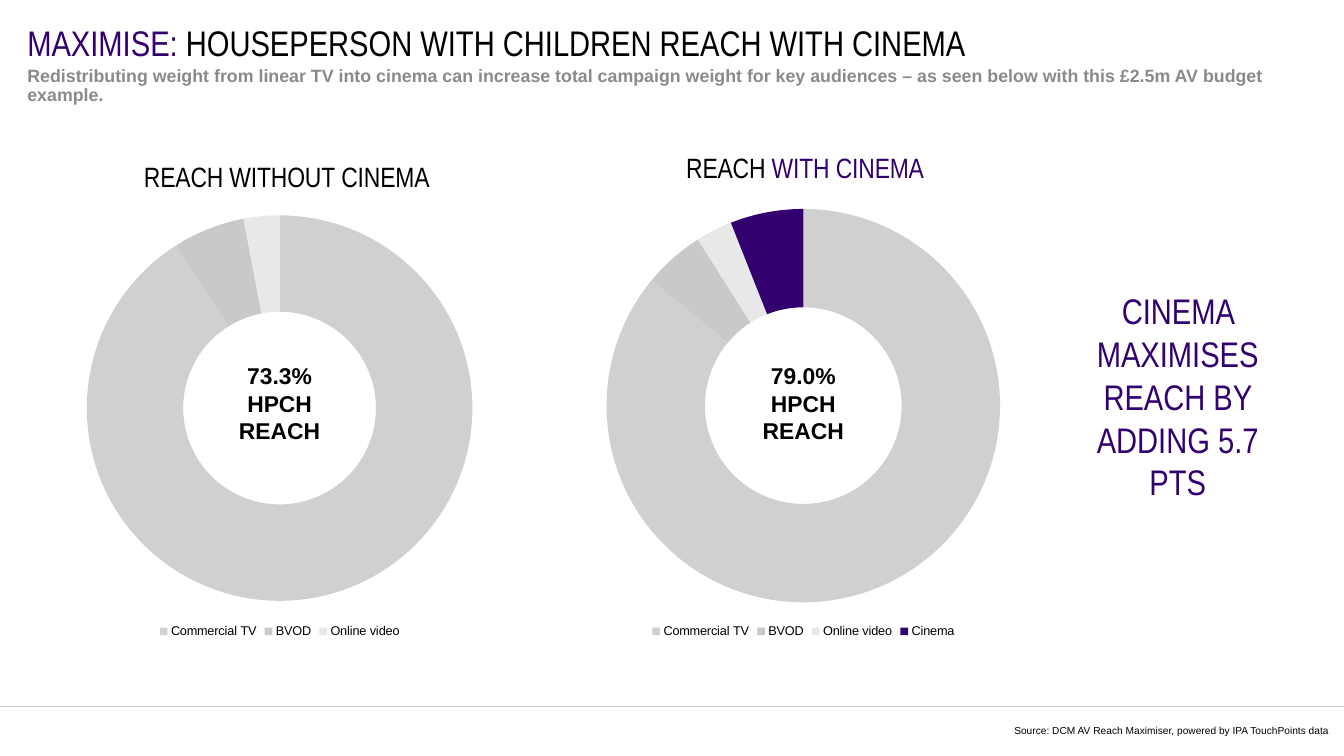
from lxml import etree
from pptx import Presentation
from pptx.chart.data import CategoryChartData
from pptx.dml.color import RGBColor
from pptx.enum.chart import XL_CHART_TYPE, XL_LEGEND_POSITION
from pptx.enum.shapes import MSO_CONNECTOR
from pptx.enum.text import MSO_ANCHOR, PP_ALIGN
from pptx.oxml import parse_xml
from pptx.oxml.ns import nsdecls, qn
from pptx.util import Cm, Pt

DOUGHNUT = XL_CHART_TYPE.DOUGHNUT
BOTTOM = XL_LEGEND_POSITION.BOTTOM
STRAIGHT = MSO_CONNECTOR.STRAIGHT
TOP, MIDDLE = MSO_ANCHOR.TOP, MSO_ANCHOR.MIDDLE
LEFT, CENTER, RIGHT = PP_ALIGN.LEFT, PP_ALIGN.CENTER, PP_ALIGN.RIGHT

COLOURS = {
    "purple": "33006F", "black": "000000", "subtitle": "8A8A8D", "rule": "CAC8C8",
    "Commercial TV": "D0D0D1", "BVOD": "CAC8C8", "Online video": "E8E8E8",
    "Cinema": "33006F", "edge": "F9F9F9",
}
BODY, NARROW = "Arial", "Arial Narrow"

HEADLINE = [("MAXIMISE: ", "purple"),
            ("HOUSEPERSON WITH CHILDREN REACH WITH CINEMA", "black")]
SUBTITLE = [("Redistributing weight from linear TV into cinema can increase total campaign "
             "weight for key audiences – as seen below with this £2.5m AV budget example.",
             "subtitle")]
CALLOUT = [("CINEMA MAXIMISES REACH BY ADDING 5.7 PTS", "purple")]
SOURCE = [("Source: DCM AV Reach Maximiser, powered by IPA TouchPoints data", "black")]
REACH_CHARTS = [
    {"heading": [("REACH WITHOUT CINEMA", "black")], "reach": "73.3%",
     "mix": {"Commercial TV": 91, "BVOD": 6, "Online video": 3},
     "heading_at": (0.23, 0.03), "ring": (0.13, 0.14, 0.74, 0.78)},
    {"heading": [("REACH ", "black"), ("WITH CINEMA", "purple")], "reach": "79.0%",
     "mix": {"Commercial TV": 86, "BVOD": 5, "Online video": 3, "Cinema": 6},
     "heading_at": (0.27, 0.02), "ring": (0.12, 0.13, 0.76, 0.79)},
]

SLIDE_W, SLIDE_H = 37.34, 21.01
MARGIN = 0.76
CHART_LEFT, CHART_TOP, CHART_W, CHART_H = 0.53, 4.01, 14.48, 13.84
CHART_STEP = 14.55
CENTRE_TOP, CENTRE_H = 4.87, 12.67
RULE_Y = 19.63


def rgb(name):
    return RGBColor.from_string(COLOURS[name])


def write_runs(paragraph, runs, font, size, bold=False):
    paragraph.font.name, paragraph.font.size, paragraph.font.bold = font, Pt(size), bold
    for words, colour in runs:
        run = paragraph.add_run()
        run.text = words
        run.font.color.rgb = rgb(colour)


def add_words(slide, box, lines, font, size, bold=False, align=LEFT, anchor=MIDDLE,
              inset=(0, 0), spacing=None):
    frame = slide.shapes.add_textbox(*map(Cm, box)).text_frame
    frame.word_wrap, frame.vertical_anchor = True, anchor
    frame.margin_left = frame.margin_right = Cm(inset[0])
    frame.margin_top = frame.margin_bottom = Cm(inset[1])
    for index, runs in enumerate(lines):
        paragraph = frame.add_paragraph() if index else frame.paragraphs[0]
        paragraph.alignment = align
        if spacing:
            paragraph.line_spacing = Pt(spacing)
        write_runs(paragraph, runs, font, size, bold)


def manual_layout(target, **fractions):
    layout = parse_xml(f"<c:layout {nsdecls('c')}><c:manualLayout/></c:layout>")
    settings = {"xMode": "edge", "yMode": "edge", **fractions}
    if "w" in fractions:
        settings = {"layoutTarget": "inner", **settings}
    for tag, value in settings.items():
        etree.SubElement(layout[0], qn(f"c:{tag}")).set("val", str(value))
    for old in target.findall(qn("c:layout")):
        target.remove(old)
    text = target.find(qn("c:tx"))
    target.insert(0 if text is None else target.index(text) + 1, layout)


def add_reach_chart(slide, left, heading, reach, mix, heading_at, ring):
    data = CategoryChartData()
    data.categories = list(mix)
    data.add_series("".join(words for words, _ in heading), list(mix.values()))
    chart = slide.shapes.add_chart(
        DOUGHNUT, Cm(left), Cm(CHART_TOP), Cm(CHART_W), Cm(CHART_H), data).chart
    chart.font.name, chart.font.size = BODY, Pt(10)
    chart.font.color.rgb = rgb("black")

    chart.has_title = True
    write_runs(chart.chart_title.text_frame.paragraphs[0], heading, NARROW, 22)
    chart.chart_title.include_in_layout = False
    chart.has_legend = True
    chart.legend.position = BOTTOM
    chart.legend.include_in_layout = False

    plot = chart.plots[0]
    plot.vary_by_categories = True
    shares = plot.series[0]
    shares.format.line.color.rgb = rgb("edge")
    shares.format.line.width = Pt(0.75)
    for index, medium in enumerate(mix):
        fill = shares.points[index].format.fill
        fill.solid()
        fill.fore_color.rgb = rgb(medium)

    chart_root = chart.element.find(qn("c:chart"))
    manual_layout(chart_root.find(qn("c:title")), **dict(zip("xy", heading_at)))
    manual_layout(chart_root.find(qn("c:plotArea")), **dict(zip("xywh", ring)))

    centre = [[(words, "black")] for words in (reach, "HPCH", "REACH")]
    add_words(slide, (left, CENTRE_TOP, CHART_W, CENTRE_H), centre, BODY, 18,
              bold=True, align=CENTER, inset=(0.25, 0.13))


def add_rule(slide):
    rule = slide.shapes.add_connector(STRAIGHT, 0, Cm(RULE_Y), Cm(SLIDE_W), Cm(RULE_Y))
    rule.line.color.rgb = rgb("rule")
    rule.line.width = Pt(1)
    etree.SubElement(rule._element.spPr, qn("a:effectLst"))


def main():
    """Build the cinema reach slide and save it."""
    deck = Presentation()
    deck.slide_width, deck.slide_height = Cm(SLIDE_W), Cm(SLIDE_H)
    slide = deck.slides.add_slide(deck.slide_layouts[6])

    add_words(slide, (MARGIN, 0.76, 34.5, 0.81), [HEADLINE], NARROW, 28)
    add_words(slide, (MARGIN, 1.85, 34.5, 1.22), [SUBTITLE], BODY, 14, bold=True,
              anchor=TOP, spacing=15)
    for index, reach_chart in enumerate(REACH_CHARTS):
        add_reach_chart(slide, CHART_LEFT + index * CHART_STEP, **reach_chart)
    add_words(slide, (29.57, 9.22, 6.3, 3.58), [CALLOUT], NARROW, 28, align=CENTER,
              inset=(0.25, 0.13))
    add_rule(slide)
    add_words(slide, (17.45, 20.02, 19.48, 0.58), [SOURCE], BODY, 8, align=RIGHT)

    deck.save("out.pptx")


if __name__ == "__main__":
    main()
